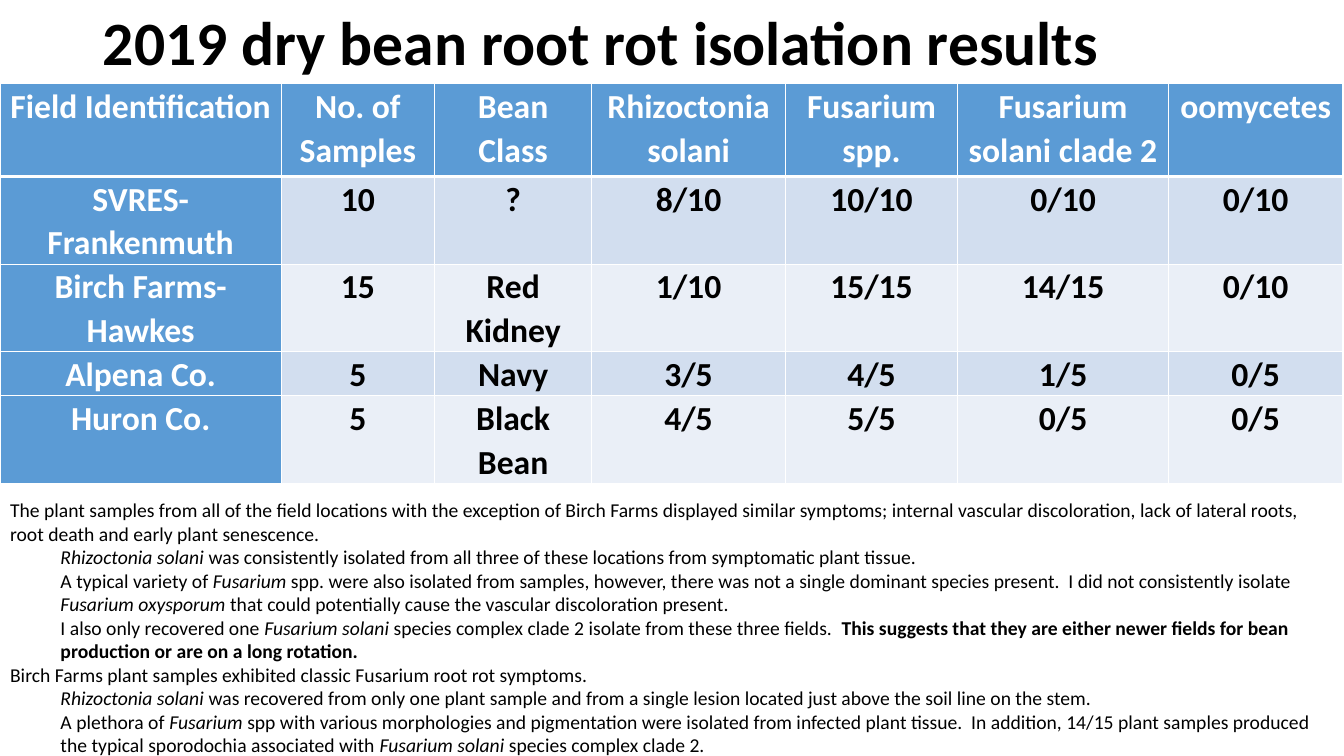
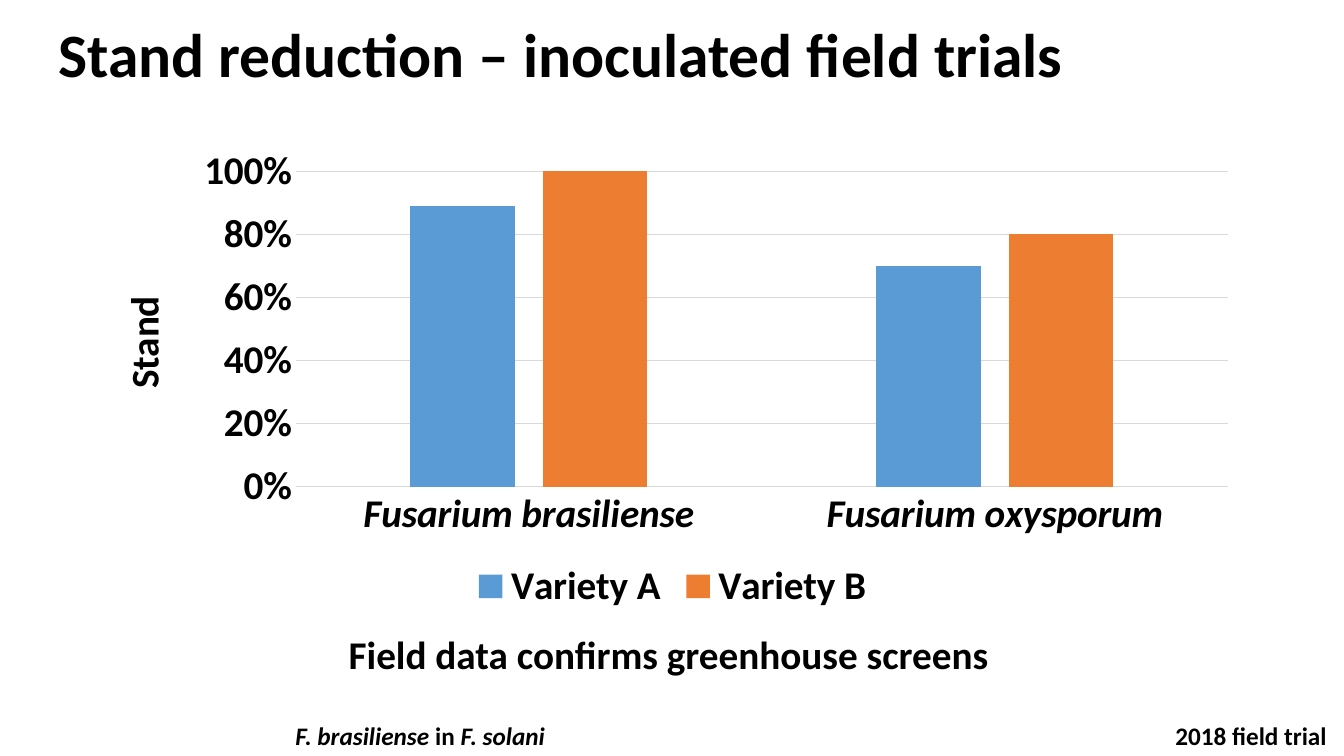
from dataclasses import dataclass

import pptx
import pptx.chart.data
import pptx.dml.color
import pptx.enum.chart
import pptx.enum.text
import pptx.oxml
import pptx.oxml.ns
import pptx.util

Inches = pptx.util.Inches
Pt = pptx.util.Pt
qn = pptx.oxml.ns.qn
ALIGN = pptx.enum.text.PP_ALIGN

FONT = "Calibri"
COLORS = {
    "text": "000000",
    "white": "FFFFFF",
    "blue": "5B9BD5",
    "orange": "ED7D31",
    "band_dark": "D2DEEF",
    "band_light": "EAEFF7",
    "grid": "D9D9D9",
}


@dataclass(frozen=True)
class Box:
    left: float
    top: float
    width: float
    height: float

    def lengths(self) -> tuple:
        return tuple(Inches(v) for v in (self.left, self.top, self.width, self.height))


@dataclass(frozen=True)
class Run:
    text: str
    italic: bool = False
    bold: bool = False


@dataclass(frozen=True)
class Note:
    level: int
    runs: tuple[Run, ...]


@dataclass(frozen=True)
class Label:
    box: Box
    size: float
    runs: tuple[Run, ...]


# Slide 1 content
COL_WIDTHS = (2.79, 1.52, 1.56, 1.92, 1.71, 2.09, 1.73)
ROW_HEIGHTS = (0.92, 0.87, 0.87, 0.43, 0.87)
RESULTS = (
    ("Field Identification", "No. of Samples", "Bean Class", "Rhizoctonia solani",
     "Fusarium spp.", "Fusarium solani clade 2", "oomycetes"),
    ("SVRES-Frankenmuth", "10", "?", "8/10", "10/10", "0/10", "0/10"),
    ("Birch Farms-Hawkes", "15", "Red Kidney", "1/10", "15/15", "14/15", "0/10"),
    ("Alpena Co.", "5", "Navy", "3/5", "4/5", "1/5", "0/5"),
    ("Huron Co.", "5", "Black Bean", "4/5", "5/5", "0/5", "0/5"),
)
NOTES = (
    Note(0, (Run("The plant samples from all of the field locations with the exception of "
                 "Birch Farms displayed similar symptoms; internal vascular discoloration, "
                 "lack of lateral roots, root death and early plant senescence."),)),
    Note(1, (Run("Rhizoctonia solani", italic=True),
             Run(" was consistently isolated from all three of these locations from "
                 "symptomatic plant tissue."))),
    Note(1, (Run("A typical variety of "),
             Run("Fusarium", italic=True),
             Run(" spp. were also isolated from samples, however, there was not a single "
                 "dominant species present.  I did not consistently isolate "),
             Run("Fusarium oxysporum", italic=True),
             Run(" that could potentially cause the vascular discoloration present."))),
    Note(1, (Run("I also only recovered one "),
             Run("Fusarium solani", italic=True),
             Run(" species complex clade 2 isolate from these three fields.  "),
             Run("This suggests that they are either newer fields for bean production "
                 "or are on a long rotation.", bold=True))),
    Note(0, (Run("Birch Farms plant samples exhibited classic Fusarium root rot symptoms."),)),
    Note(1, (Run("Rhizoctonia solani", italic=True),
             Run(" was recovered from only one plant sample and from a single lesion "
                 "located just above the soil line on the stem."))),
    Note(1, (Run("A plethora of "),
             Run("Fusarium ", italic=True),
             Run("spp with various morphologies and pigmentation were isolated from "
                 "infected plant tissue.  In addition, 14/15 plant samples produced the "
                 "typical sporodochia associated with "),
             Run("Fusarium solani", italic=True),
             Run(" species complex clade 2."))),
)

# Slide 2 content
SPECIES = ("Fusarium brasiliense", "Fusarium oxysporum")
STANDS = (("Variety A", (0.89, 0.7), "blue"), ("Variety B", (1.02, 0.8), "orange"))
LABELS = (
    Label(Box(11.56, 7.1, 1.72, 0.4), 18, (Run("2018 field trial", bold=True),)),
    Label(Box(2.83, 7.1, 2.69, 0.4), 18,
          (Run("F. brasiliense", True, True), Run(" in ", bold=True),
           Run("F. solani", True, True))),
    Label(Box(3.36, 6.2, 6.62, 0.57), 28,
          (Run("Field data confirms greenhouse screens", bold=True),)),
)


# Shared helpers
def rgb(name: str):
    return pptx.dml.color.RGBColor.from_string(COLORS[name])


def format_font(font, *, size: float, bold: bool = False, italic: bool = False,
                color: str = "text") -> None:
    font.name = FONT
    font.size = Pt(size)
    font.bold = bold
    font.italic = italic
    font.color.rgb = rgb(color)


def add_text(p, text: str, **style) -> None:
    r = p.add_run()
    r.text = text
    format_font(r.font, **style)


def add_runs(p, runs: tuple[Run, ...], size: float) -> None:
    for run in runs:
        add_text(p, run.text, size=size, bold=run.bold, italic=run.italic)


def place(sp, box: Box) -> None:
    sp.left, sp.top, sp.width, sp.height = box.lengths()


def add_slide(prs, layout: int, title: str, box: Box):
    s = prs.slides.add_slide(prs.slide_layouts[layout])
    sp = s.shapes.title
    place(sp, box)
    tf = sp.text_frame
    tf.auto_size = pptx.enum.text.MSO_AUTO_SIZE.NONE
    tf.vertical_anchor = pptx.enum.text.MSO_ANCHOR.MIDDLE
    p = tf.paragraphs[0]
    p.alignment = ALIGN.LEFT
    p.line_spacing = 0.9
    add_text(p, title, size=44, bold=True)
    return s


# Table
def set_borders(cell, top: float, bottom: float) -> None:
    tc_pr = cell._tc.get_or_add_tcPr()
    sides = (("lnL", 1), ("lnR", 1), ("lnT", top), ("lnB", bottom))
    for i, (tag, width) in enumerate(sides):
        ln = pptx.oxml.parse_xml(
            f'<a:{tag} {pptx.oxml.ns.nsdecls("a")} w="{Pt(width)}"><a:solidFill>'
            f'<a:srgbClr val="{COLORS["white"]}"/></a:solidFill></a:{tag}>')
        tc_pr.insert(i, ln)


def add_results_table(s) -> None:
    box = Box(0, 0.83, sum(COL_WIDTHS), sum(ROW_HEIGHTS))
    table = s.shapes.add_table(len(RESULTS), len(COL_WIDTHS), *box.lengths()).table
    for column, width in zip(table.columns, COL_WIDTHS):
        column.width = Inches(width)
    for row, (texts, height) in enumerate(zip(RESULTS, ROW_HEIGHTS)):
        table.rows[row].height = Inches(height)
        for col, text in enumerate(texts):
            cell = table.cell(row, col)
            header = row == 0 or col == 0
            band = "band_dark" if row % 2 else "band_light"
            cell.fill.solid()
            cell.fill.fore_color.rgb = rgb("blue" if header else band)
            cell.margin_left = cell.margin_right = Inches(0.07)
            cell.margin_top = cell.margin_bottom = 0
            set_borders(cell, top=3 if row == 1 else 1, bottom=3 if row == 0 else 1)
            p = cell.text_frame.paragraphs[0]
            p.alignment = ALIGN.CENTER
            p.line_spacing = 1.07
            add_text(p, text, size=24, bold=True, color="white" if header else "text")


def fill_notes(sp) -> None:
    place(sp, Box(0, 4.89, 13.33, 2.69))
    tf = sp.text_frame
    tf.auto_size = pptx.enum.text.MSO_AUTO_SIZE.NONE
    for i, note in enumerate(NOTES):
        p = tf.add_paragraph() if i else tf.paragraphs[0]
        p.level = note.level
        p.space_before = Pt(0)
        p_pr = p._p.get_or_add_pPr()
        p_pr.set("marL", str(Inches(0.5 * note.level)))
        p_pr.set("indent", "0")
        p_pr.append(pptx.oxml.parse_xml(f'<a:buNone {pptx.oxml.ns.nsdecls("a")}/>'))
        add_runs(p, note.runs, 14)


# Chart
def set_layout(parent, index: int, **percents) -> None:
    """Fix the place of a chart part, in percent of the chart."""
    old = parent.find(qn("c:layout"))
    if old is not None:
        parent.remove(old)
    target = '<c:layoutTarget val="inner"/>' if "w" in percents else ""
    modes = "".join(f'<c:{k}Mode val="edge"/>' for k in ("x", "y"))
    values = "".join(f'<c:{k} val="{v / 100}"/>' for k, v in percents.items())
    parent.insert(index, pptx.oxml.parse_xml(
        f'<c:layout {pptx.oxml.ns.nsdecls("c")}><c:manualLayout>'
        f'{target}{modes}{values}</c:manualLayout></c:layout>'))


def add_stand_chart(s) -> None:
    data = pptx.chart.data.CategoryChartData(number_format="0%")
    data.categories = SPECIES
    for name, values, _ in STANDS:
        data.add_series(name, values)
    chart = s.shapes.add_chart(pptx.enum.chart.XL_CHART_TYPE.COLUMN_CLUSTERED,
                               *Box(0.92, 1.37, 11.5, 4.76).lengths(), data).chart
    chart.has_title = False
    format_font(chart.font, size=28, bold=True)

    plot = chart.plots[0]
    plot.gap_width = 219
    plot.overlap = -27
    plot.vary_by_categories = False
    for series, (_, _, color) in zip(plot.series, STANDS):
        series.format.fill.solid()
        series.format.fill.fore_color.rgb = rgb(color)

    chart.has_legend = True
    chart.legend.position = pptx.enum.chart.XL_LEGEND_POSITION.BOTTOM
    chart.legend.include_in_layout = False
    format_font(chart.legend.font, size=28, bold=True)

    cat, val = chart.category_axis, chart.value_axis
    for axis in (cat, val):
        axis.major_tick_mark = pptx.enum.chart.XL_TICK_MARK.NONE
        format_font(axis.tick_labels.font, size=28, bold=True, italic=axis is cat)
    val.minimum_scale, val.maximum_scale, val.major_unit = 0, 1, 0.2
    val.tick_labels.number_format = "0%"
    val.tick_labels.number_format_is_linked = False
    val.has_major_gridlines = True
    for line in (cat.format.line, val.major_gridlines.format.line):
        line.color.rgb = rgb("grid")
        line.width = Pt(0.75)
    val.format.line.fill.background()
    add_text(val.axis_title.text_frame.paragraphs[0], "Stand", size=28, bold=True)

    set_layout(val.axis_title._element, 1, x=1.5, y=31.5)
    plot_area = chart._chartSpace.find(qn("c:chart")).find(qn("c:plotArea"))
    set_layout(plot_area, 0, x=17.5, y=6.9, w=80.4, h=65.8)


def add_label(s, label: Label) -> None:
    tf = s.shapes.add_textbox(*label.box.lengths()).text_frame
    tf.word_wrap = False
    add_runs(tf.paragraphs[0], label.runs, label.size)


def main() -> None:
    prs = pptx.Presentation()
    prs.slide_width, prs.slide_height = Inches(13.33), Inches(7.5)

    s = add_slide(prs, 1, "2019 dry bean root rot isolation results",
                  Box(0.92, 0, 11.5, 0.91))
    add_results_table(s)
    fill_notes(s.placeholders[1])

    s = add_slide(prs, 5, "Stand reduction – inoculated field trials",
                  Box(0.48, 0, 12.41, 1.14))
    add_stand_chart(s)
    for label in LABELS:
        add_label(s, label)

    prs.save("out.pptx")


if __name__ == "__main__":
    main()
